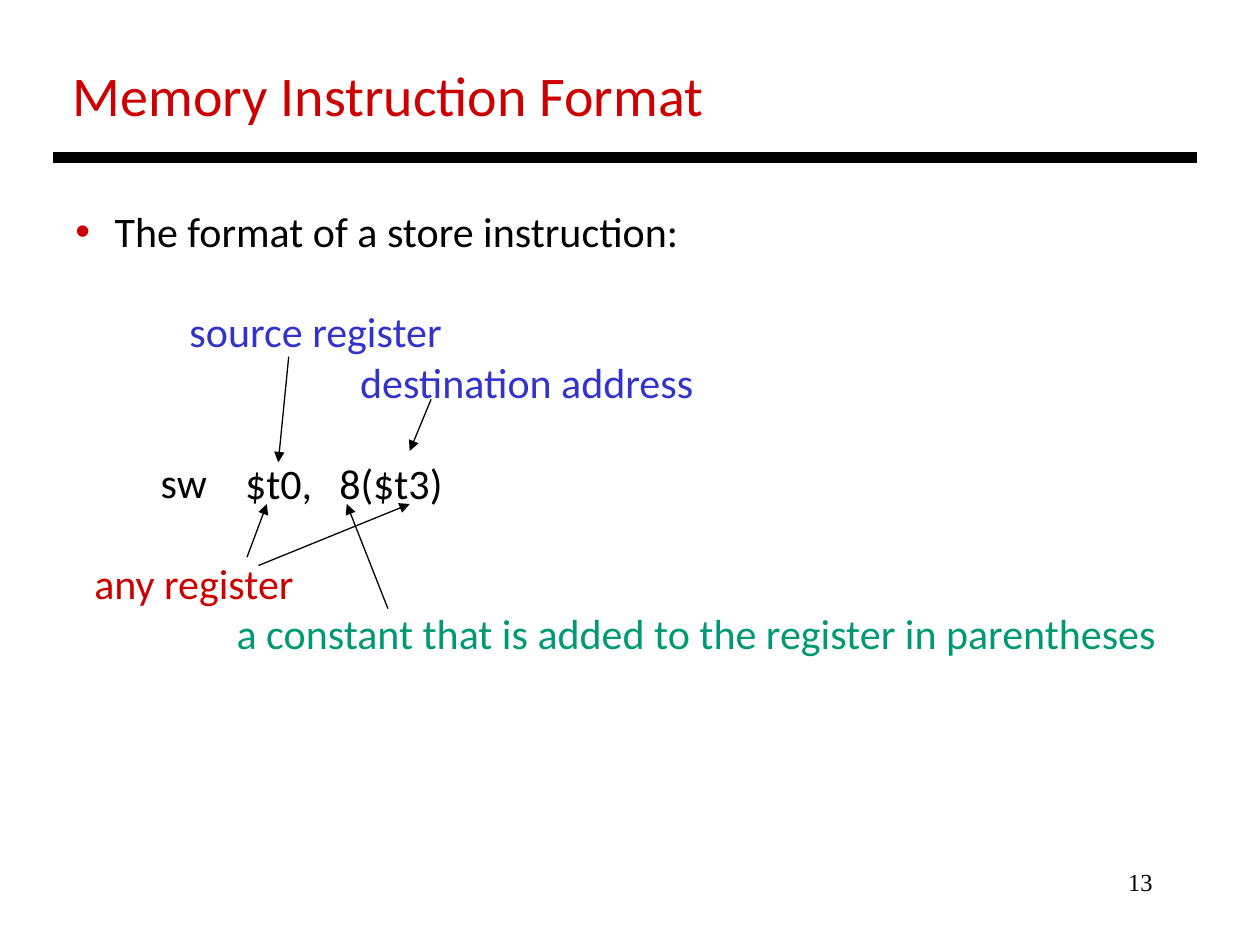
from lxml.etree import SubElement
from pptx import Presentation
from pptx.dml.color import RGBColor
from pptx.enum.shapes import MSO_CONNECTOR
from pptx.enum.text import MSO_ANCHOR, MSO_AUTO_SIZE, PP_ALIGN
from pptx.oxml.ns import qn
from pptx.util import Cm, Pt

COLORS = {"black": "000000", "red": "CC0000", "blue": "3333CC", "green": "009973"}

TITLE = "Memory Instruction Format"
NUMBER = "13"
GAP = 28.7
ROWS = [
    ("The format of a store instruction:", "black", 0.79, 0),
    ("source register", "blue", 2.3, 1),
    ("destination address", "blue", 5.74, 0),
    ("sw", "black", 1.72, 1),
    ("any register", "red", 0.38, 1),
    ("a constant that is added to the register in parentheses", "green", 3.25, 0),
]
PARTS = [("$t0,", 4.69, 1.9), ("8($t3)", 6.59, 2.7)]
PART_TOP = 9.09
RULE = (1.07, 3.18, 24.13, 3.18)
ARROWS = [
    (5.82, 7.19, 5.61, 9.32),
    (8.69, 8.05, 8.26, 9.09),
    (4.98, 11.23, 5.38, 10.16),
    (5.21, 11.4, 8.26, 10.16),
    (7.82, 12.27, 6.99, 10.16),
]
FRAME = {
    "word_wrap": True,
    "auto_size": MSO_AUTO_SIZE.NONE,
    "vertical_anchor": MSO_ANCHOR.TOP,
    "margin_left": Cm(0.25),
    "margin_right": Cm(0.25),
    "margin_top": Cm(0.13),
    "margin_bottom": Cm(0.13),
}


def apply(item, values):
    for name, value in values.items():
        setattr(item, name, value)


def place(shape, left, top, width, height):
    apply(shape, {"left": Cm(left), "top": Cm(top),
                  "width": Cm(width), "height": Cm(height)})
    apply(shape.text_frame, FRAME)
    return shape.text_frame


def write(para, text, size, color, face="Calibri", align=PP_ALIGN.LEFT, gap=0):
    apply(para, {"alignment": align, "space_before": Pt(gap),
                 "space_after": Pt(0), "line_spacing": 1.0})
    run = para.add_run()
    run.text = text
    apply(run.font, {"name": face, "size": Pt(size), "bold": False})
    run.font.color.rgb = RGBColor.from_string(COLORS[color])


def label(slide, spot, *style):
    box = slide.shapes.add_textbox(0, 0, 0, 0)
    write(place(box, *spot).paragraphs[0], *style)


def indent(para, margin, first):
    props = para._p.get_or_add_pPr()
    props.set("marL", str(Cm(margin)))
    props.set("indent", str(Cm(first)))
    return props


def bullet(para, margin):
    props = indent(para, margin, -margin)
    tint = SubElement(props, qn("a:buClr"))
    SubElement(tint, qn("a:srgbClr"), val=COLORS["red"])
    SubElement(props, qn("a:buChar"), char="•")


def plain(para, first):
    SubElement(indent(para, 0, first), qn("a:buNone"))


def draw(slide, ends, width, head=False):
    line = slide.shapes.add_connector(MSO_CONNECTOR.STRAIGHT, *map(Cm, ends))
    line.line.width = Pt(width)
    line.line.color.rgb = RGBColor.from_string(COLORS["black"])
    if head:
        SubElement(line.line._get_or_add_ln(), qn("a:tailEnd"), type="triangle")
    SubElement(line._element.spPr, qn("a:effectLst"))


def main():
    deck = Presentation()
    apply(deck, {"slide_width": Cm(25.4), "slide_height": Cm(19.05)})
    slide = deck.slides.add_slide(deck.slide_layouts[1])
    title, body = slide.placeholders

    frame = place(title, 1.22, 1.09, 13.39, 1.63)
    write(frame.paragraphs[0], TITLE, 32, "red")
    draw(slide, RULE, 6)

    frame = place(body, 1.27, 4.01, 22.48, 9.5)
    for i, (text, color, left, skip) in enumerate(ROWS):
        para = frame.add_paragraph() if i else frame.paragraphs[0]
        write(para, text, 24, color, gap=skip * GAP)
        if i:
            plain(para, left)
        else:
            bullet(para, left)

    for text, left, width in PARTS:
        label(slide, (left, PART_TOP, width, 1.3), text, 24, "black")

    for ends in ARROWS:
        draw(slide, ends, 0.75, head=True)

    label(slide, (18.21, 17.35, 5.28, 1.27),
          NUMBER, 14, "black", "Times New Roman", PP_ALIGN.RIGHT)

    deck.save("out.pptx")


if __name__ == "__main__":
    main()
